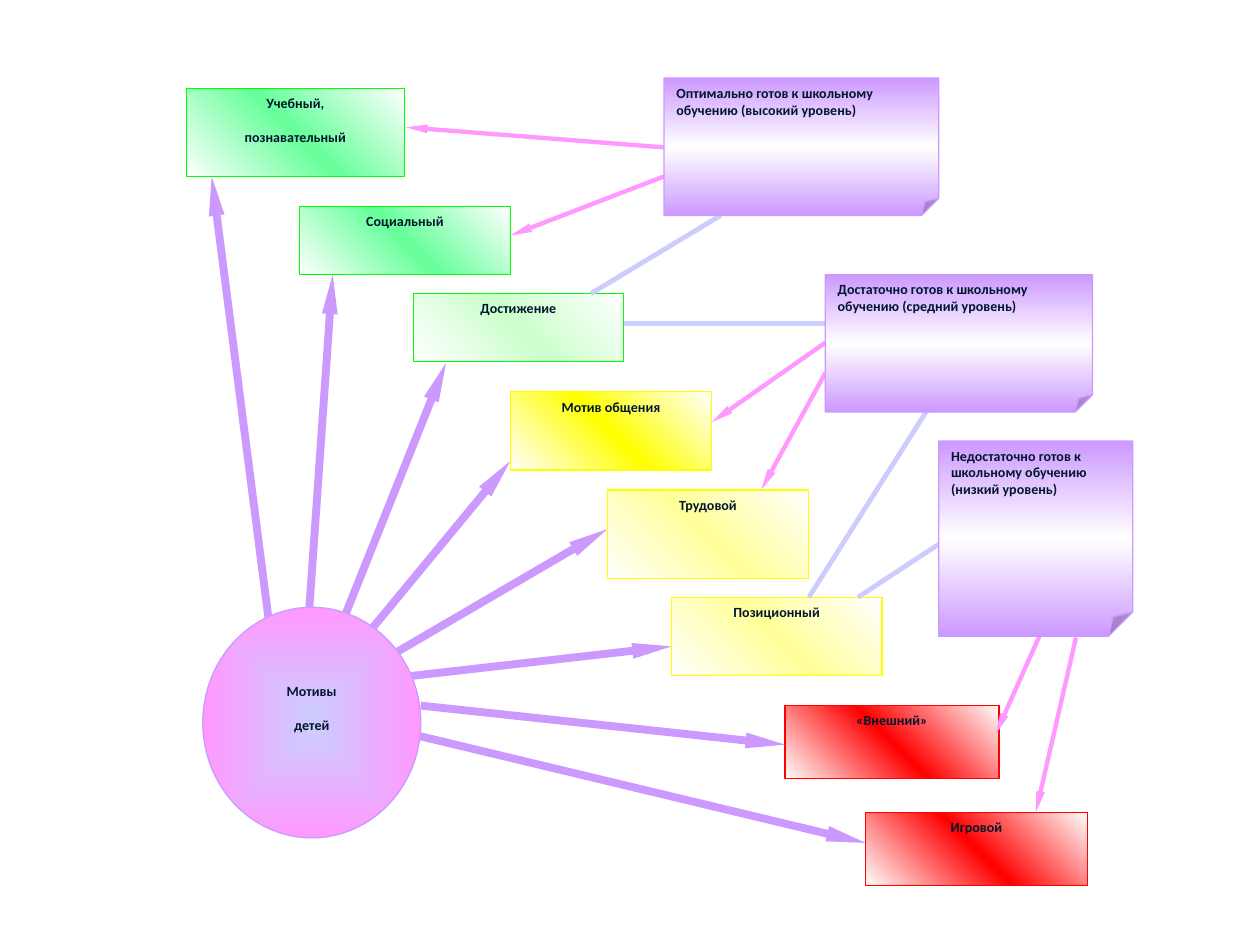
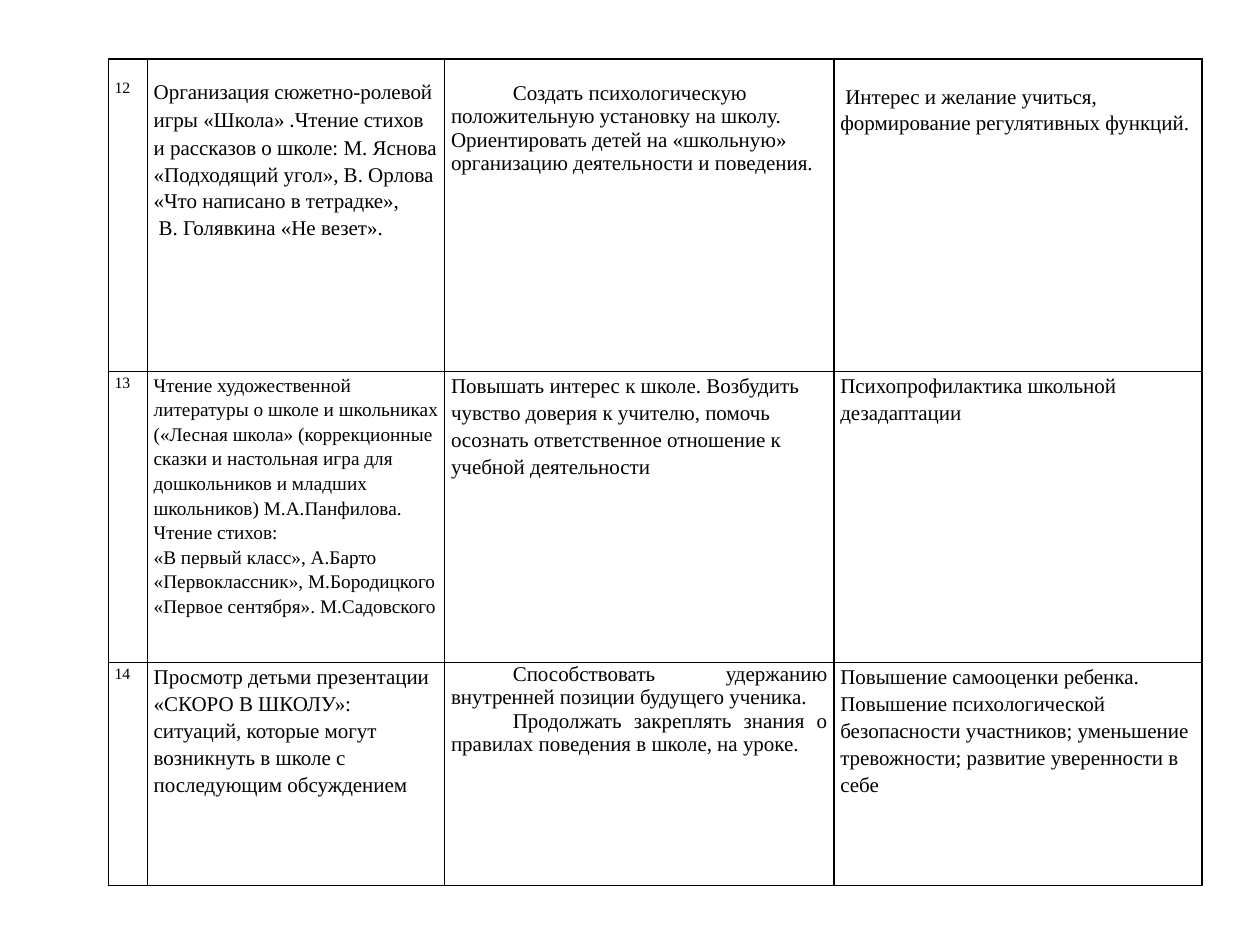
from dataclasses import dataclass, field
from typing import NamedTuple, Optional

from lxml.etree import SubElement
from pptx import Presentation
from pptx.dml.color import RGBColor
from pptx.enum.shapes import MSO_CONNECTOR as Connector, MSO_SHAPE as Preset
from pptx.enum.text import MSO_ANCHOR as Anchor, PP_ALIGN as Align
from pptx.oxml.ns import qn
from pptx.shapes.autoshape import Shape
from pptx.slide import Slide
from pptx.text.text import TextFrame
from pptx.util import Emu, Pt

EMU_PER_PX = 9144


def px(length: int) -> Emu:
    return Emu(length * EMU_PER_PX)


@dataclass(frozen=True)
class Theme:
    ink: str = "00172E"
    black: str = "000000"
    white: str = "FFFFFF"
    violet: str = "CC99FF"
    pink: str = "FF99FF"
    lilac: str = "CCCCFF"
    green: str = "00FF00"
    mint: str = "66FF99"
    pale_green: str = "CCFFCC"
    yellow: str = "FFFF00"
    pale_yellow: str = "FFFF99"
    red: str = "FF0000"
    sans: str = "Calibri"
    serif: str = "Times New Roman"
    label_size: int = 8
    number_size: int = 9
    small_size: int = 11
    body_size: int = 12
    label_gap: int = 10
    outline: float = 0.75
    border: int = 1


THEME = Theme()


class Span(NamedTuple):
    text: str
    font: str = THEME.serif


class Box(NamedTuple):
    left: int
    top: int
    width: int
    height: int


class Motive(NamedTuple):
    lines: list[str]
    box: Box
    middle: str
    outline: str


class Level(NamedTuple):
    text: str
    box: Box


class Link(NamedTuple):
    start: tuple[int, int]
    end: tuple[int, int]


class LinkStyle(NamedTuple):
    color: str
    width: float
    arrow: bool
    links: list[Link]


@dataclass(frozen=True)
class CellText:
    paras: list
    size: int = THEME.body_size
    spacing: Optional[float] = 1.15
    indents: list[int] = field(default_factory=list)
    align: Align = Align.LEFT
    top: int = 0


MOTIVES = [
    Motive(["Учебный,", "познавательный"], Box(148, 70, 173, 70), THEME.mint, THEME.green),
    Motive(["Социальный"], Box(238, 164, 167, 54), THEME.mint, THEME.green),
    Motive(["Достижение"], Box(328, 233, 167, 54), THEME.pale_green, THEME.green),
    Motive(["Мотив общения"], Box(405, 311, 160, 62), THEME.yellow, THEME.yellow),
    Motive(["Трудовой"], Box(482, 389, 160, 70), THEME.pale_yellow, THEME.yellow),
    Motive(["Позиционный"], Box(533, 474, 167, 62), THEME.pale_yellow, THEME.yellow),
    Motive(["«Внешний»"], Box(623, 560, 170, 58), THEME.red, THEME.red),
    Motive(["Игровой"], Box(687, 645, 176, 58), THEME.red, THEME.red),
]

LEVELS = [
    Level("Достаточно готов к школьному обучению (средний уровень)", Box(655, 218, 212, 109)),
    Level("Оптимально готов к школьному обучению (высокий уровень)", Box(527, 62, 218, 109)),
    Level("Недостаточно готов к школьному обучению (низкий уровень)", Box(745, 350, 154, 155)),
]

LINK_STYLES = [
    LinkStyle(THEME.violet, 4.5, True, [
        Link((213, 490), (168, 140)),
        Link((245, 490), (264, 218)),
        Link((270, 498), (354, 288)),
        Link((296, 498), (405, 366)),
        Link((309, 521), (482, 420)),
        Link((322, 537), (533, 513)),
        Link((334, 560), (623, 591)),
        Link((328, 583), (687, 669)),
    ]),
    LinkStyle(THEME.pink, 2.5, True, [
        Link((527, 117), (322, 101)),
        Link((527, 140), (405, 187)),
        Link((655, 272), (565, 335)),
        Link((655, 296), (604, 389)),
        Link((828, 498), (790, 583)),
        Link((854, 506), (822, 645)),
    ]),
    LinkStyle(THEME.lilac, 2.75, False, [
        Link((572, 171), (469, 233)),
        Link((655, 257), (495, 257)),
        Link((745, 311), (642, 474)),
        Link((751, 428), (681, 474)),
    ]),
]

COLUMN_WIDTHS = [31, 236, 309, 292]
ROW_HEIGHTS = [248, 231, 177]
FIRST_LINE = 49
SPACE = 4

PLAN = [
    [
        CellText(["12"], size=THEME.number_size, top=14),
        CellText([
            [Span("Организация сюжетно-ролевой игры «Школа»"), Span(" .", THEME.sans),
             Span("Чтение стихов и рассказов о школе: М. Яснова «Подходящий угол», "
                  "В. Орлова «Что написано в тетрадке»,")],
            "В. Голявкина «Не везет».",
        ], indents=[0, SPACE], top=14),
        CellText(["Создать психологическую положительную установку на школу. Ориентировать "
                  "детей на «школьную» организацию деятельности и поведения."],
                 spacing=None, indents=[FIRST_LINE], top=18),
        CellText(["Интерес и желание учиться, формирование регулятивных функций."],
                 indents=[SPACE], top=18),
    ],
    [
        CellText(["13"], size=THEME.number_size),
        CellText([
            "Чтение художественной литературы о школе и школьниках («Лесная школа» "
            "(коррекционные сказки и настольная игра для дошкольников и младших "
            "школьников) М.А.Панфилова.",
            "Чтение стихов:",
            "«В первый класс», А.Барто «Первоклассник», М.Бородицкого "
            "«Первое сентября». М.Садовского",
        ], size=THEME.small_size),
        CellText(["Повышать интерес к школе. Возбудить чувство доверия к учителю, помочь "
                  "осознать ответственное отношение к учебной деятельности"]),
        CellText(["Психопрофилактика школьной дезадаптации"]),
    ],
    [
        CellText(["14"], size=THEME.number_size),
        CellText(["Просмотр детьми презентации «СКОРО В ШКОЛУ»: ситуаций, которые могут "
                  "возникнуть в школе с последующим обсуждением"]),
        CellText([
            "Способствовать удержанию внутренней позиции будущего ученика.",
            "Продолжать закреплять знания о правилах поведения в школе, на уроке.",
        ], spacing=None, indents=[FIRST_LINE, FIRST_LINE], align=Align.JUSTIFY),
        CellText(["Повышение самооценки ребенка. Повышение психологической безопасности "
                  "участников; уменьшение тревожности; развитие уверенности в себе"]),
    ],
]


def rgb(color: str) -> RGBColor:
    return RGBColor.from_string(color)


def write_text(frame: TextFrame, paras: list, *, size: int, color: str, font: str,
               bold: bool = False, align: Align = Align.LEFT, after: int = 0,
               spacing: Optional[float] = None, indents: Optional[list[int]] = None) -> None:
    for index, content in enumerate(paras):
        para = frame.paragraphs[0] if index == 0 else frame.add_paragraph()
        para.alignment = align
        para.space_after = Pt(after)
        if spacing:
            para.line_spacing = spacing
        if indents:
            properties = para._p.get_or_add_pPr()
            properties.set("marL", "0")
            properties.set("indent", str(px(indents[index])))
        spans = [Span(content, font)] if isinstance(content, str) else content
        for span in spans:
            run = para.add_run()
            run.text = span.text
            run.font.name = span.font
            run.font.size = Pt(size)
            run.font.bold = bold
            run.font.color.rgb = rgb(color)


def fill_gradient(shape: Shape, colors: list[str], angle: Optional[int]) -> None:
    shape.fill.gradient()
    gradient = shape._element.spPr.find(qn("a:gradFill"))
    gradient.clear()
    stops = SubElement(gradient, qn("a:gsLst"))
    for index, color in enumerate(colors):
        position = 100000 * index // (len(colors) - 1)
        stop = SubElement(stops, qn("a:gs"), pos=str(position))
        SubElement(stop, qn("a:srgbClr"), val=color)
    if angle is None:
        shade = SubElement(gradient, qn("a:path"), path="shape")
        SubElement(shade, qn("a:fillToRect"), l="50000", t="50000", r="50000", b="50000")
    else:
        SubElement(gradient, qn("a:lin"), ang=str(angle * 60000), scaled="1")


def draw_shape(page: Slide, preset: Preset, box: Box, lines: list[str], *, colors: list[str],
               outline: str, angle: Optional[int] = None, align: Align = Align.CENTER,
               inset_top: int = 5) -> Shape:
    shape = page.shapes.add_shape(preset, *map(px, box))
    shape.shadow.inherit = False
    fill_gradient(shape, colors, angle)
    shape.line.color.rgb = rgb(outline)
    shape.line.width = Pt(THEME.outline)
    frame = shape.text_frame
    frame.word_wrap = True
    frame.vertical_anchor = Anchor.TOP
    frame.margin_top = px(inset_top)
    write_text(frame, lines, size=THEME.label_size, color=THEME.ink, font=THEME.sans,
               bold=True, align=align, after=THEME.label_gap)
    return shape


def set_fold(note: Shape, share: float) -> None:
    geometry = note._element.spPr.find(qn("a:prstGeom"))
    guides = geometry.find(qn("a:avLst"))
    if guides is None:
        guides = SubElement(geometry, qn("a:avLst"))
    SubElement(guides, qn("a:gd"), name="adj", fmla=f"val {int(share * 100000)}")


def draw_link(page: Slide, link: Link, style: LinkStyle) -> None:
    line = page.shapes.add_connector(Connector.STRAIGHT, *map(px, link.start + link.end))
    line.line.color.rgb = rgb(style.color)
    line.line.width = Pt(style.width)
    if style.arrow:
        SubElement(line.line._get_or_add_ln(), qn("a:tailEnd"),
                   type="triangle", w="sm", len="lg")
    SubElement(line._element.spPr, qn("a:effectLst"))


def draw_motives(page: Slide) -> None:
    for motive in MOTIVES:
        draw_shape(page, Preset.RECTANGLE, motive.box, motive.lines, angle=315,
                   colors=[THEME.white, motive.middle, THEME.white], outline=motive.outline)
    for style in LINK_STYLES:
        for link in style.links:
            draw_link(page, link, style)
    draw_shape(page, Preset.OVAL, Box(161, 482, 173, 183), ["Мотивы", "детей"],
               colors=[THEME.lilac, THEME.pink], outline=THEME.violet, inset_top=33)
    for level in LEVELS:
        note = draw_shape(page, Preset.FOLDED_CORNER, level.box, [level.text], angle=90,
                          colors=[THEME.violet, THEME.white, THEME.violet],
                          outline=THEME.violet, align=Align.LEFT)
        set_fold(note, 0.125)


def draw_cell(cell, content: CellText) -> None:
    cell.margin_left = cell.margin_right = px(5)
    cell.margin_top, cell.margin_bottom = px(content.top), 0
    properties = cell._tc.get_or_add_tcPr()
    for side in ("lnL", "lnR", "lnT", "lnB"):
        border = SubElement(properties, qn(f"a:{side}"), w=str(Pt(THEME.border)))
        SubElement(SubElement(border, qn("a:solidFill")), qn("a:srgbClr"), val=THEME.black)
    cell.fill.background()
    write_text(cell.text_frame, content.paras, size=content.size, color=THEME.black,
               font=THEME.serif, align=content.align, spacing=content.spacing,
               indents=content.indents)


def draw_plan(page: Slide) -> None:
    box = Box(86, 47, sum(COLUMN_WIDTHS), sum(ROW_HEIGHTS))
    table = page.shapes.add_table(len(PLAN), len(COLUMN_WIDTHS), *map(px, box)).table
    table.first_row = table.horz_banding = False
    for column, width in zip(table.columns, COLUMN_WIDTHS):
        column.width = px(width)
    for row, height, contents in zip(table.rows, ROW_HEIGHTS, PLAN):
        row.height = px(height)
        for cell, content in zip(row.cells, contents):
            draw_cell(cell, content)


def main() -> None:
    deck = Presentation()
    deck.slide_width, deck.slide_height = px(1000), px(750)
    for draw in (draw_motives, draw_plan):
        draw(deck.slides.add_slide(deck.slide_layouts[6]))
    deck.save("out.pptx")


if __name__ == "__main__":
    main()
